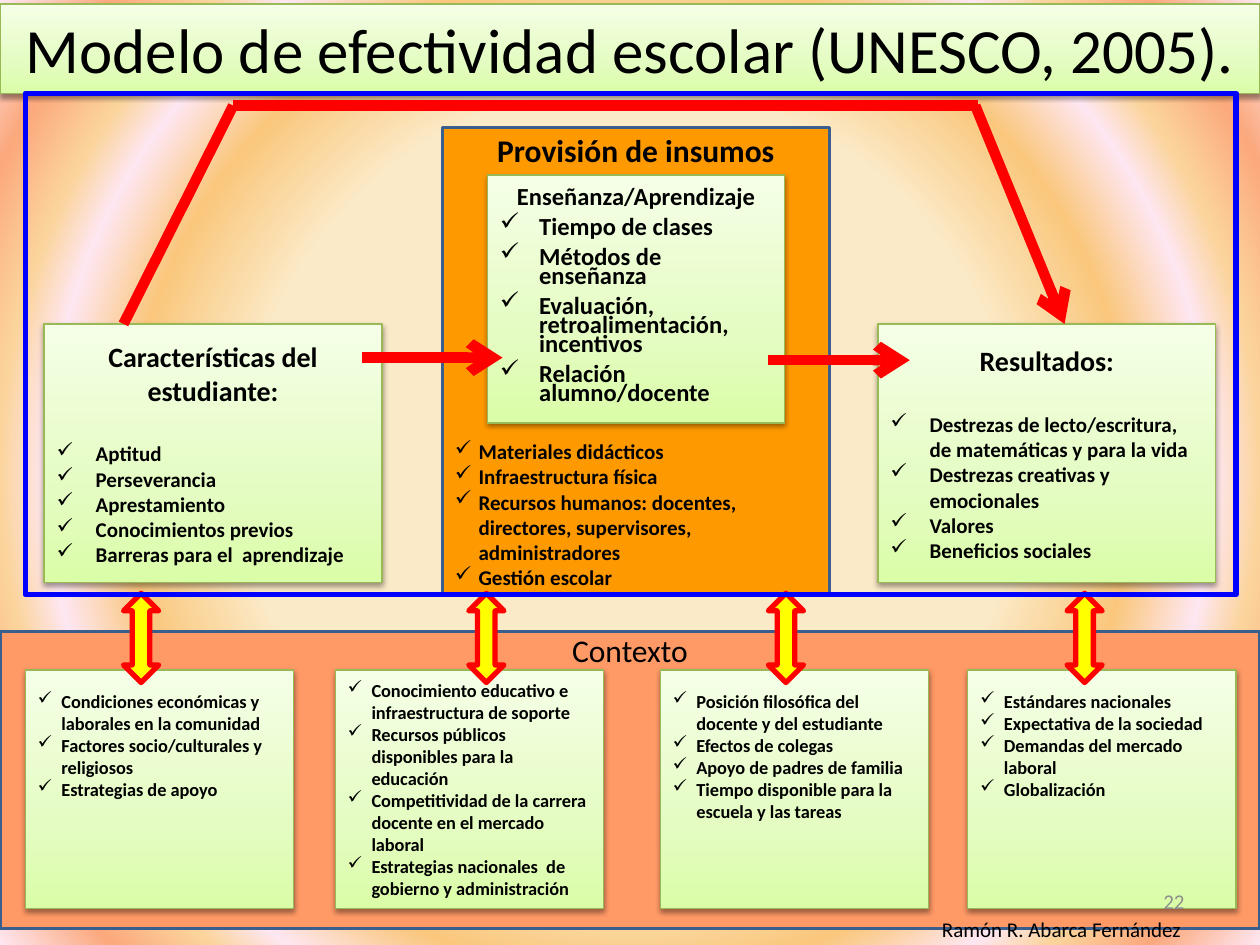
"""Build the school effectiveness model slide."""
from dataclasses import dataclass

from lxml import etree
from pptx import Presentation, util as u
from pptx.dml.color import RGBColor
from pptx.enum import shapes, text
from pptx.oxml.ns import qn


@dataclass(frozen=True)
class Theme:
    font: str = "Calibri"
    ink: str = "000000"
    muted: str = "8C8C8C"
    card_line: str = "98B955"
    panel_line: str = "3A5F8C"
    inputs: str = "FF9900"
    context: str = "FF9966"
    flow: str = "FF0000"
    link: str = "FFFF00"
    frame: str = "0000FF"
    card_stops: tuple = ((0, "DAFDA7"), (35, "E4FCC2"), (100, "F5FFE7"))
    page_stops: tuple = ((49, "FBEAC7"), (64, "FAC77D"), (74, "FEE7F2"),
                         (80, "FBD49C"), (89, "FBA97D"), (100, "FEE7F2"))
    title: float = 36
    panel: float = 18
    heading: float = 16
    teaching: float = 14
    body: float = 12
    small: float = 10.5


THEME = Theme()
WIDE, NARROW = 0.79, 0.48
SIDE_SIZE = (6.81, 5.21)
SIDE_TOP = 6.53
CONTEXT_TOP, CONTEXT_SIZE = 13.51, (5.41, 4.8)
LINK_TOP, LINK_SIZE = 11.96, (0.71, 1.8)

TITLE = "Modelo de efectividad escolar (UNESCO, 2005)."
SIDES = [
    (0.89, "Características del estudiante:",
     ["Aptitud", "Perseverancia", "Aprestamiento", "Conocimientos previos",
      "Barreras para el  aprendizaje"]),
    (17.7, "Resultados:",
     ["Destrezas de lecto/escritura, de matemáticas y para la vida",
      "Destrezas creativas y emocionales", "Valores", "Beneficios sociales"]),
]
INPUTS = ("Provisión de insumos",
          ["Materiales didácticos", "Infraestructura física",
           "Recursos humanos: docentes, directores, supervisores, administradores",
           "Gestión escolar"])
TEACHING = ("Enseñanza/Aprendizaje",
            ["Tiempo de clases", "Métodos de enseñanza",
             "Evaluación, retroalimentación, incentivos", "Relación alumno/docente"])
CONTEXT = [
    (0.51, 0.41, ["Condiciones económicas y laborales en la comunidad",
                  "Factores socio/culturales y religiosos", "Estrategias de apoyo"]),
    (6.76, 0.18, ["Conocimiento educativo e infraestructura de soporte",
                  "Recursos públicos disponibles para la educación",
                  "Competitividad de la carrera docente en el mercado laboral",
                  "Estrategias nacionales  de gobierno y administración"]),
    (13.31, 0.41, ["Posición filosófica del docente y del estudiante",
                   "Efectos de colegas", "Apoyo de padres de familia",
                   "Tiempo disponible para la escuela y las tareas"]),
    (19.51, 0.41, ["Estándares nacionales", "Expectativa de la sociedad",
                   "Demandas del mercado laboral", "Globalización"]),
]
BYPASS = [((4.7, 2.13), (19.71, 2.13), False),
          ((19.66, 2.13), (21.46, 6.53), True),
          ((4.7, 2.13), (2.49, 6.53), False)]
STEPS = [((7.29, 7.21), (10.13, 7.21), True),
         ((15.49, 7.26), (18.34, 7.26), True)]
LINKS = [21.51, 15.49, 2.49, 9.45]


def add(parent, tag, **attributes):
    return etree.SubElement(parent, qn(tag), attributes)


def set_gradient(holder, stops, radial=False):
    solid = holder.find(qn("a:solidFill"))
    gradient = etree.Element(qn("a:gradFill"), rotWithShape="1")
    stop_list = add(gradient, "a:gsLst")
    for position, color in stops:
        stop = add(stop_list, "a:gs", pos=str(position * 1000))
        add(stop, "a:srgbClr", val=color)
    if radial:
        shade = add(gradient, "a:path", path="circle")
        add(shade, "a:fillToRect", l="50000", t="50000", r="50000", b="50000")
    else:
        add(gradient, "a:lin", ang="16200000", scaled="0")
    holder.replace(solid, gradient)


def place(shape, left, top, width, height):
    shape.left, shape.top = u.Cm(left), u.Cm(top)
    shape.width, shape.height = u.Cm(width), u.Cm(height)


def style(shape, fill, line, weight):
    shape.shadow.inherit = False
    if fill:
        shape.fill.solid()
        shape.fill.fore_color.rgb = RGBColor.from_string(fill)
    else:
        shape.fill.background()
    shape.line.color.rgb = RGBColor.from_string(line)
    shape.line.width = u.Pt(weight)


def style_card(shape):
    style(shape, THEME.card_stops[0][1], THEME.card_line, 0.75)
    properties = shape.element.spPr
    set_gradient(properties, THEME.card_stops)
    shadow = add(properties.find(qn("a:effectLst")), "a:outerShdw", blurRad="40000",
                 dist="20000", dir="5400000", rotWithShape="0")
    add(add(shadow, "a:srgbClr", val=THEME.ink), "a:alpha", val="38000")


def add_box(page, bounds, fill, line, weight, kind=shapes.MSO_SHAPE.RECTANGLE):
    box = page.shapes.add_shape(kind, *(u.Cm(value) for value in bounds))
    style(box, fill, line, weight)
    return box


def add_card(page, bounds):
    card = add_box(page, bounds, THEME.inputs, THEME.card_line, 0.75)
    style_card(card)
    return card


def prepare(shape, anchor=text.MSO_ANCHOR.MIDDLE, top=0.13):
    frame = shape.text_frame
    frame.word_wrap = True
    frame.auto_size = text.MSO_AUTO_SIZE.NONE
    frame.vertical_anchor = anchor
    frame.margin_top = u.Cm(top)
    return frame


def write(frame, words, size, bold=False, align=text.PP_ALIGN.CENTER,
          color=THEME.ink, indent=0, after=0):
    para = frame.paragraphs[0]
    if para.runs:
        para = frame.add_paragraph()
    para.alignment = align
    para.space_after = u.Pt(after)
    span = para.add_run()
    span.text = words
    span.font.name, span.font.size, span.font.bold = THEME.font, u.Pt(size), bold
    span.font.color.rgb = RGBColor.from_string(color)
    if indent:
        properties = para._p.get_or_add_pPr()
        properties.set("marL", str(u.Cm(indent)))
        properties.set("indent", str(-u.Cm(indent)))
        add(properties, "a:buChar", char="✓")


def write_list(frame, items, size, indent):
    for item in items:
        write(frame, item, size, True, text.PP_ALIGN.LEFT, indent=indent)


def add_line(page, start, end, arrow):
    ends = [u.Cm(value) for value in (*start, *end)]
    line = page.shapes.add_connector(shapes.MSO_CONNECTOR.STRAIGHT, *ends)
    line.line.color.rgb = RGBColor.from_string(THEME.flow)
    line.line.width = u.Pt(6)
    if arrow:
        add(line.line._get_or_add_ln(), "a:tailEnd", type="arrow")
    add(line.element.spPr, "a:effectLst")


def add_note(page, bounds, words, align, color):
    note = page.shapes.add_textbox(*(u.Cm(value) for value in bounds))
    write(prepare(note), words, THEME.body, align=align, color=color)


def main():
    deck = Presentation()
    deck.slide_width, deck.slide_height = u.Cm(25.4), u.Cm(19.05)
    page = deck.slides.add_slide(deck.slide_layouts[5])
    page.background.fill.solid()
    set_gradient(page.element.find(".//" + qn("p:bgPr")), THEME.page_stops, radial=True)

    title = page.shapes.title
    place(title, 0, 0.08, 25.4, 1.8)
    style_card(title)
    write(prepare(title), TITLE, THEME.title)

    for left, heading, items in SIDES:
        frame = prepare(add_card(page, (left, SIDE_TOP, *SIDE_SIZE)))
        write(frame, heading, THEME.heading, True, after=19.5)
        write_list(frame, items, THEME.body, WIDE)

    inputs = add_box(page, (8.92, 2.57, 7.8, 9.4), THEME.inputs, THEME.panel_line, 2)
    frame = prepare(inputs)
    write(frame, INPUTS[0], THEME.panel, True, after=154)
    write_list(frame, INPUTS[1], THEME.body, NARROW)

    frame = prepare(add_card(page, (9.83, 3.53, 5.99, 5)))
    write(frame, TEACHING[0], THEME.teaching, True)
    write_list(frame, TEACHING[1], THEME.teaching, WIDE)
    for para in frame.paragraphs:
        para.line_spacing, para.space_before = u.Pt(11), u.Pt(6)

    for start, end, arrow in BYPASS:
        add_line(page, start, end, arrow)

    context = add_box(page, (0, 12.73, 25.4, 5.99), THEME.context, THEME.panel_line, 2)
    write(prepare(context, text.MSO_ANCHOR.TOP, 0), "Contexto", THEME.panel)
    for left, margin, items in CONTEXT:
        card = add_card(page, (left, CONTEXT_TOP, *CONTEXT_SIZE))
        write_list(prepare(card, text.MSO_ANCHOR.TOP, margin), items, THEME.small, NARROW)

    for left in LINKS:
        add_box(page, (left, LINK_TOP, *LINK_SIZE), THEME.link, THEME.flow, 3,
                shapes.MSO_SHAPE.UP_DOWN_ARROW)
    for start, end, arrow in STEPS:
        add_line(page, start, end, arrow)

    add_note(page, (17.4, 18.21, 8, 1.02), "Ramón R. Abarca Fernández",
             text.PP_ALIGN.CENTER, THEME.ink)
    add_box(page, (0.51, 1.88, 24.41, 10.11), None, THEME.frame, 3)
    add_note(page, (18.21, 17.65, 5.92, 1.02), "22", text.PP_ALIGN.RIGHT, THEME.muted)
    deck.save("out.pptx")


if __name__ == "__main__":
    main()
